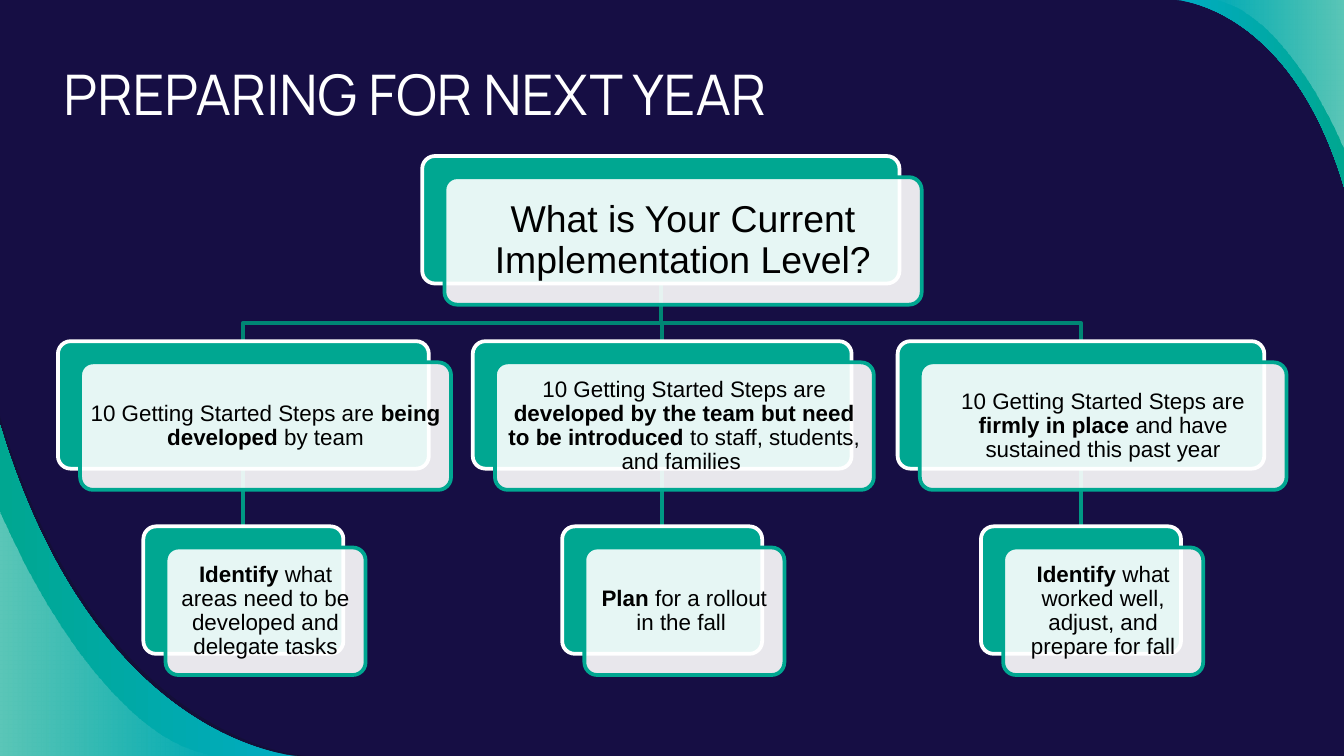
"""Build a decision-tree slide about preparing for next year."""
from dataclasses import dataclass

from lxml.etree import SubElement
from pptx import Presentation
from pptx.dml.color import RGBColor as Rgb
from pptx.enum.shapes import MSO_CONNECTOR as Connector, MSO_SHAPE as Preset
from pptx.enum.text import MSO_ANCHOR as Anchor, MSO_AUTO_SIZE as AutoSize, PP_ALIGN as Align
from pptx.oxml.ns import qn
from pptx.util import Cm, Pt


@dataclass(frozen=True)
class Theme:
    """Colours, fonts and type sizes of the slide."""
    night: Rgb = Rgb.from_string("160E44")
    shade: Rgb = Rgb.from_string("12102F")
    white: Rgb = Rgb.from_string("FFFFFF")
    black: Rgb = Rgb.from_string("000000")
    green: Rgb = Rgb.from_string("00A791")
    cyan: Rgb = Rgb.from_string("00ACC2")
    branch: Rgb = Rgb.from_string("008674")
    drop: Rgb = Rgb.from_string("009884")
    title_font: str = "Manrope"
    body_font: str = "Arial"
    title_size: Pt = Pt(30)
    root_size: Pt = Pt(20)
    body_size: Pt = Pt(12)
    stroke: Pt = Pt(2)


THEME = Theme()
WIDTH, HEIGHT = 25.4, 14.29
CARD_HEIGHT, ACTION_WIDTH = 2.41, 3.78
SHIFT_X, SHIFT_Y = 0.42, 0.4
ROOT_TOP, ROW_PITCH = 2.95, 3.5
ROOT_CENTER, ROOT_WIDTH = 12.49, 9.02
FIRST_CENTER, LAST_CENTER = 4.6, 20.43
BAR_TOP = 6.1

ROOT = [("What is Your Current Implementation Level?", False)]
STEPS = "10 Getting Started Steps are "
BRANCHES = [
    (7.01,
     [(STEPS, False), ("being developed", True), (" by team", False)],
     [("Identify", True), (" what areas need to be developed and delegate tasks", False)]),
    (7.16,
     [(STEPS, False), ("developed by the team but need to be introduced ", True),
      ("to staff, students, and families ", False)],
     [("Plan ", True), ("for a rollout in the fall ", False)]),
    (6.93,
     [(STEPS, False), ("firmly in place", True), (" and have sustained this past year", False)],
     [("Identify ", True), ("what worked well, adjust, and prepare for fall", False)]),
]


def set_alpha(color_parent, percent):
    """Give the colour inside an element an opacity in percent."""
    color = next(color_parent.iter(qn("a:srgbClr")))
    SubElement(color, qn("a:alpha")).set("val", str(percent * 1000))


def add_outline(page, points, close):
    """Add a freeform through the given points."""
    start, *others = [(Cm(x), Cm(y)) for x, y in points]
    builder = page.shapes.build_freeform(*start)
    builder.add_line_segments(others, close=close)
    outline = builder.convert_to_shape()
    outline.shadow.inherit = False
    return outline


def add_swoosh(page, curve, corner):
    """Add an unlined corner shape bounded by a cubic curve."""
    swoosh = add_outline(page, [*curve, corner], True)
    swoosh.line.fill.background()
    first, *others = list(swoosh.element.iter(qn("a:lnTo")))[:3]
    first.tag = qn("a:cubicBezTo")
    for segment in others:
        first.append(segment[0])
        segment.getparent().remove(segment)
    return swoosh


def fill_gradient(shape, colors, angle, alphas=()):
    """Fill a shape with a two-stop gradient."""
    shape.fill.gradient()
    shape.fill.gradient_angle = angle
    for stop, color in zip(shape.fill.gradient_stops, colors):
        stop.color.rgb = color
    for element, alpha in zip(shape.element.spPr.iter(qn("a:gs")), alphas):
        set_alpha(element, alpha)


def add_decor(page):
    """Add the curved bands in two opposite corners."""
    low, high = (0, HEIGHT), (WIDTH, 0)
    shade = add_swoosh(page, ((0, 7.87), (1.85, 14.07), (5.77, HEIGHT), (5.77, HEIGHT)), low)
    shade.fill.solid()
    shade.fill.fore_color.rgb = THEME.shade
    set_alpha(shade.element.spPr, 54)
    bands = [
        (((5.61, HEIGHT), (5.61, HEIGHT), (1.83, 14.1), (0, 8.03)),
         ((0, 9.65), (0, 9.65), (1.75, 14), (4.11, HEIGHT)), low, 180),
        (((22.23, 0), (22.23, 0), (24.38, 0.1), (WIDTH, 3.53)),
         ((WIDTH, 2.84), (WIDTH, 2.84), (24.33, 0.18), (22.89, 0)), high, 0),
    ]
    for outer, inner, corner, angle in bands:
        fill_gradient(add_swoosh(page, outer, corner), (THEME.cyan, THEME.green), angle)
        fill_gradient(add_swoosh(page, inner, corner), (THEME.white, THEME.white), angle, (0, 36))


def add_title(page, text):
    """Place and format the title placeholder."""
    title = page.shapes.title
    title.left, title.top, title.width, title.height = Cm(0.95), Cm(0.88), Cm(19.53), Cm(1.75)
    frame = title.text_frame
    frame.text = text
    frame.word_wrap = True
    frame.auto_size = AutoSize.NONE
    frame.vertical_anchor = Anchor.TOP
    frame.margin_left = frame.margin_right = frame.margin_top = frame.margin_bottom = Cm(0.25)
    para = frame.paragraphs[0]
    para.alignment = Align.LEFT
    font = para.runs[0].font
    font.name, font.size, font.color.rgb = THEME.title_font, THEME.title_size, THEME.white


def add_drop(page, center, top, bottom):
    """Add a vertical connector between two cards."""
    drop = page.shapes.add_connector(Connector.STRAIGHT, Cm(center), Cm(top),
                                     Cm(center), Cm(bottom))
    drop.line.color.rgb = THEME.drop
    drop.line.width = THEME.stroke
    SubElement(drop.element.spPr, qn("a:effectLst"))


def add_elbow(page, center, top, bottom):
    """Add a bent line from the root card to a branch."""
    points = [(ROOT_CENTER, top), (ROOT_CENTER, BAR_TOP), (center, BAR_TOP), (center, bottom)]
    elbow = add_outline(page, points, False)
    elbow.fill.background()
    elbow.line.color.rgb = THEME.branch
    elbow.line.width = THEME.stroke


def add_panel(page, left, top, width, fill, stroke):
    """Add one rounded panel."""
    panel = page.shapes.add_shape(Preset.ROUNDED_RECTANGLE, Cm(left), Cm(top),
                                  Cm(width), Cm(CARD_HEIGHT))
    panel.adjustments[0] = 0.1
    panel.shadow.inherit = False
    panel.fill.solid()
    panel.fill.fore_color.rgb = fill
    panel.line.color.rgb = stroke
    panel.line.width = THEME.stroke
    return panel


def add_card(page, center, row, width, spans, size=THEME.body_size, margin=0.12):
    """Add a green panel with a translucent text panel in front."""
    left, top = center - width / 2, ROOT_TOP + row * ROW_PITCH
    add_panel(page, left, top, width, THEME.green, THEME.white)
    front = add_panel(page, left + SHIFT_X, top + SHIFT_Y, width, THEME.white, THEME.green)
    set_alpha(front.element.spPr.find(qn("a:solidFill")), 90)
    frame = front.text_frame
    frame.word_wrap = True
    frame.vertical_anchor = Anchor.MIDDLE
    frame.margin_left = frame.margin_right = frame.margin_top = frame.margin_bottom = Cm(margin)
    para = frame.paragraphs[0]
    para.alignment = Align.CENTER
    para.line_spacing = 0.9
    for text, bold in spans:
        span = para.add_run()
        span.text = text
        font = span.font
        font.name, font.size, font.bold = THEME.body_font, size, bold
        font.color.rgb = THEME.black


def add_tree(page):
    """Draw the connecting lines and then the cards over them."""
    pitch = (LAST_CENTER - FIRST_CENTER) / (len(BRANCHES) - 1)
    centers = [FIRST_CENTER + index * pitch for index in range(len(BRANCHES))]
    level_top, action_top = ROOT_TOP + ROW_PITCH, ROOT_TOP + 2 * ROW_PITCH
    for center in reversed(centers):
        add_drop(page, center, level_top + CARD_HEIGHT, action_top)
        add_elbow(page, center, ROOT_TOP + CARD_HEIGHT, level_top)
    add_card(page, ROOT_CENTER, 0, ROOT_WIDTH, ROOT, THEME.root_size, 0.2)
    for center, (width, level, action) in zip(centers, BRANCHES):
        add_card(page, center, 1, width, level)
        add_card(page, center, 2, ACTION_WIDTH, action)


def main():
    """Build and save the deck."""
    deck = Presentation()
    deck.slide_width, deck.slide_height = Cm(WIDTH), Cm(HEIGHT)
    page = deck.slides.add_slide(deck.slide_layouts.get_by_name("Title Only"))
    page.background.fill.solid()
    page.background.fill.fore_color.rgb = THEME.night
    add_decor(page)
    add_title(page, "PREPARING FOR NEXT YEAR")
    add_tree(page)
    deck.save("out.pptx")


if __name__ == "__main__":
    main()
